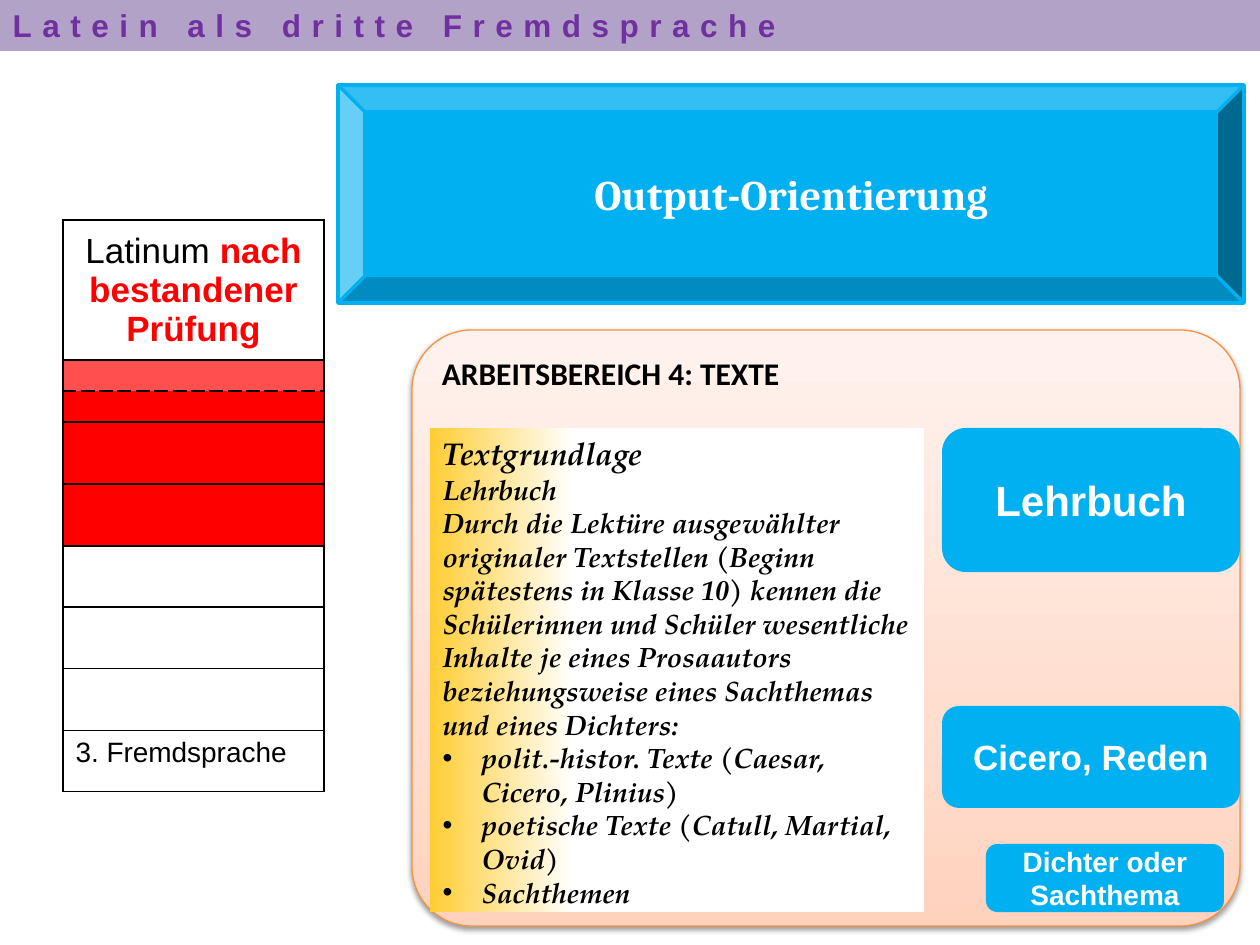
from dataclasses import dataclass

from lxml.etree import SubElement
from pptx import Presentation
from pptx.dml.color import RGBColor
from pptx.enum.shapes import MSO_SHAPE
from pptx.enum.text import MSO_ANCHOR, MSO_AUTO_SIZE, PP_ALIGN
from pptx.oxml.ns import qn
from pptx.util import Inches, Pt

PX = Inches(1) / 126


@dataclass
class Theme:
    blue: str = "00B0F0"
    white: str = "FFFFFF"
    black: str = "000000"
    red: str = "FF0000"
    rose: str = "FF4F4F"
    violet: str = "7030A0"
    lilac: str = "B3A2C7"
    orange: str = "F69240"
    peach: tuple = ((0, "FFD2BD"), (35, "FFDED0"), (100, "FFF2ED"))
    gold: tuple = ((0, "FFCD33"), (29, "FFFFFF"), (100, "FFFFFF"))
    sans: str = "Arial"
    serif: str = "Cambria"
    head: str = "Calibri"
    book: str = "TeX Gyre Pagella"
    large: int = 24
    mid: int = 20
    base: int = 18
    small: int = 16
    tiny: int = 8


def style(run, size, face, color, bold=True, italic=False):
    font = run.font
    font.size, font.name, font.bold, font.italic = Pt(size), face, bold, italic
    font.color.rgb = RGBColor.from_string(color)


def blend(shape, stops, angle):
    """Fill with a linear gradient; angle runs counter-clockwise."""
    shape.fill.gradient()
    shape.fill.gradient_angle = angle
    rail = shape._element.spPr.find(".//" + qn("a:gsLst"))
    rail.clear()
    for pos, color in stops:
        stop = SubElement(rail, qn("a:gs"), pos=str(pos * 1000))
        SubElement(stop, qn("a:srgbClr"), val=color)


theme = Theme()
prs = Presentation()
prs.slide_width, prs.slide_height = Inches(10), Inches(7.5)
slide = prs.slides.add_slide(prs.slide_layouts[1])
shapes = slide.shapes
title, body = slide.placeholders

# Title bar and text basis
for holder, box in ((title, (0, 0, 1260, 51)), (body, (430, 428, 494, 484))):
    holder.left, holder.top, holder.width, holder.height = [round(n * PX) for n in box]
    holder.text_frame.auto_size = MSO_AUTO_SIZE.NONE
    holder.text_frame.vertical_anchor = MSO_ANCHOR.TOP

title.fill.solid()
title.fill.fore_color.rgb = RGBColor.from_string(theme.lilac)
title.text_frame.text = "Latein als dritte Fremdsprache"
para = title.text_frame.paragraphs[0]
para.alignment = PP_ALIGN.LEFT
style(para.runs[0], theme.base, theme.sans, theme.violet)
para.runs[0].font._element.set("spc", "600")

blend(body, theme.gold, 0)
plain = [
    "Textgrundlage",
    "Lehrbuch",
    "Durch die Lektüre ausgewählter originaler Textstellen (Beginn spätestens "
    "in Klasse 10) kennen die Schülerinnen und Schüler wesentliche Inhalte je "
    "eines Prosaautors beziehungsweise eines Sachthemas und eines Dichters:",
]
points = [
    "polit.-histor. Texte (Caesar, Cicero, Plinius)",
    "poetische Texte (Catull, Martial, Ovid)",
    "Sachthemen",
]
body.text_frame.text = "\n".join(plain + points)
for i, para in enumerate(body.text_frame.paragraphs):
    para.space_before = Pt(0)
    listed = i >= len(plain)
    indent = round(39 * PX) if listed else 0
    props = para._p.get_or_add_pPr()
    props.set("marL", str(indent))
    props.set("indent", str(-indent))
    if listed:
        SubElement(props, qn("a:buFont"), typeface=theme.sans)
        SubElement(props, qn("a:buChar"), char="•")
    else:
        SubElement(props, qn("a:buNone"))
    size = theme.small if i else theme.base
    style(para.runs[0], size, theme.book, theme.black, italic=True)

# Work area panel, behind the text basis
panel = shapes.add_shape(MSO_SHAPE.ROUNDED_RECTANGLE,
                         *[round(n * PX) for n in (412, 330, 828, 596)])
shapes._spTree.insert(2, panel._element)
panel.adjustments[0] = 0.1
blend(panel, theme.peach, 90)
panel.line.color.rgb = RGBColor.from_string(theme.orange)
panel.line.width = Pt(0.75)
panel.shadow.inherit = False
effects = panel._element.spPr.find(qn("a:effectLst"))
shade = SubElement(effects, qn("a:outerShdw"), blurRad=str(Pt(3.1)),
                   dist=str(Pt(1.6)), dir="5400000", rotWithShape="0")
tint = SubElement(shade, qn("a:srgbClr"), val=theme.black)
SubElement(tint, qn("a:alpha"), val="38000")
panel.text_frame.vertical_anchor = MSO_ANCHOR.TOP
panel.text_frame.text = "ARBEITSBEREICH 4: TEXTE"
para = panel.text_frame.paragraphs[0]
para.alignment = PP_ALIGN.LEFT
para.space_after = Pt(12)
style(para.runs[0], theme.base, theme.head, theme.black)

# Blue boxes
ROUND = MSO_SHAPE.ROUNDED_RECTANGLE
boxes = [
    (MSO_SHAPE.BEVEL, (338, 85, 906, 218), "Output-Orientierung", theme.large, theme.serif),
    (ROUND, (942, 428, 298, 144), "Lehrbuch", theme.large, theme.sans),
    (ROUND, (942, 706, 298, 102), "Cicero, Reden", theme.mid, theme.sans),
    (ROUND, (986, 844, 238, 68), "Dichter oder Sachthema", theme.small, theme.sans),
]
for kind, box, text, size, face in boxes:
    shape = shapes.add_shape(kind, *[round(n * PX) for n in box])
    shape.shadow.inherit = False
    shape.fill.solid()
    shape.fill.fore_color.rgb = RGBColor.from_string(theme.blue)
    if kind == MSO_SHAPE.BEVEL:
        shape.line.color.rgb = RGBColor.from_string(theme.blue)
        shape.line.width = Pt(2)
    else:
        shape.line.fill.background()
    frame = shape.text_frame
    frame.text = text
    frame.word_wrap = True
    frame.vertical_anchor = MSO_ANCHOR.MIDDLE
    frame.paragraphs[0].alignment = PP_ALIGN.CENTER
    style(frame.paragraphs[0].runs[0], size, face, theme.white)

# Column of school years
rows = [140, 31, 31] + [62, 62, 61] * 2
fills = {1: theme.rose, 2: theme.red, 3: theme.red, 4: theme.red}
dashed = {(1, "lnB"), (2, "lnT")}
last = len(rows) - 1
table = shapes.add_table(len(rows), 1, *[round(n * PX) for n in (63, 220, 261, sum(rows))]).table
table.first_row = table.horz_banding = False
for i, height in enumerate(rows):
    table.rows[i].height = round(height * PX)
    cell = table.cell(i, 0)
    props = cell._tc.get_or_add_tcPr()
    for side in ("lnL", "lnR", "lnT", "lnB"):
        line = SubElement(props, qn("a:" + side), w=str(Pt(1)))
        ink = SubElement(line, qn("a:solidFill"))
        SubElement(ink, qn("a:srgbClr"), val=theme.black)
        dash = "sysDash" if (i, side) in dashed else "solid"
        SubElement(line, qn("a:prstDash"), val=dash)
    if i in fills:
        cell.fill.solid()
        cell.fill.fore_color.rgb = RGBColor.from_string(fills[i])
    else:
        cell.fill.background()
    if 0 < i < last:
        cell.margin_top = cell.margin_bottom = 0
        SubElement(cell.text_frame.paragraphs[0]._p, qn("a:endParaRPr"),
                   sz=str(theme.tiny * 100))

top = table.cell(0, 0)
top.vertical_anchor = MSO_ANCHOR.MIDDLE
para = top.text_frame.paragraphs[0]
para.alignment = PP_ALIGN.CENTER
for text, color, bold in (("Latinum ", theme.black, False),
                          ("nach bestandener Prüfung", theme.red, True)):
    run = para.add_run()
    run.text = text
    style(run, theme.mid, theme.sans, color, bold)

foot = table.cell(last, 0).text_frame
foot.text = "3. Fremdsprache"
style(foot.paragraphs[0].runs[0], theme.small, theme.sans, theme.black, False)

prs.save("out.pptx")
